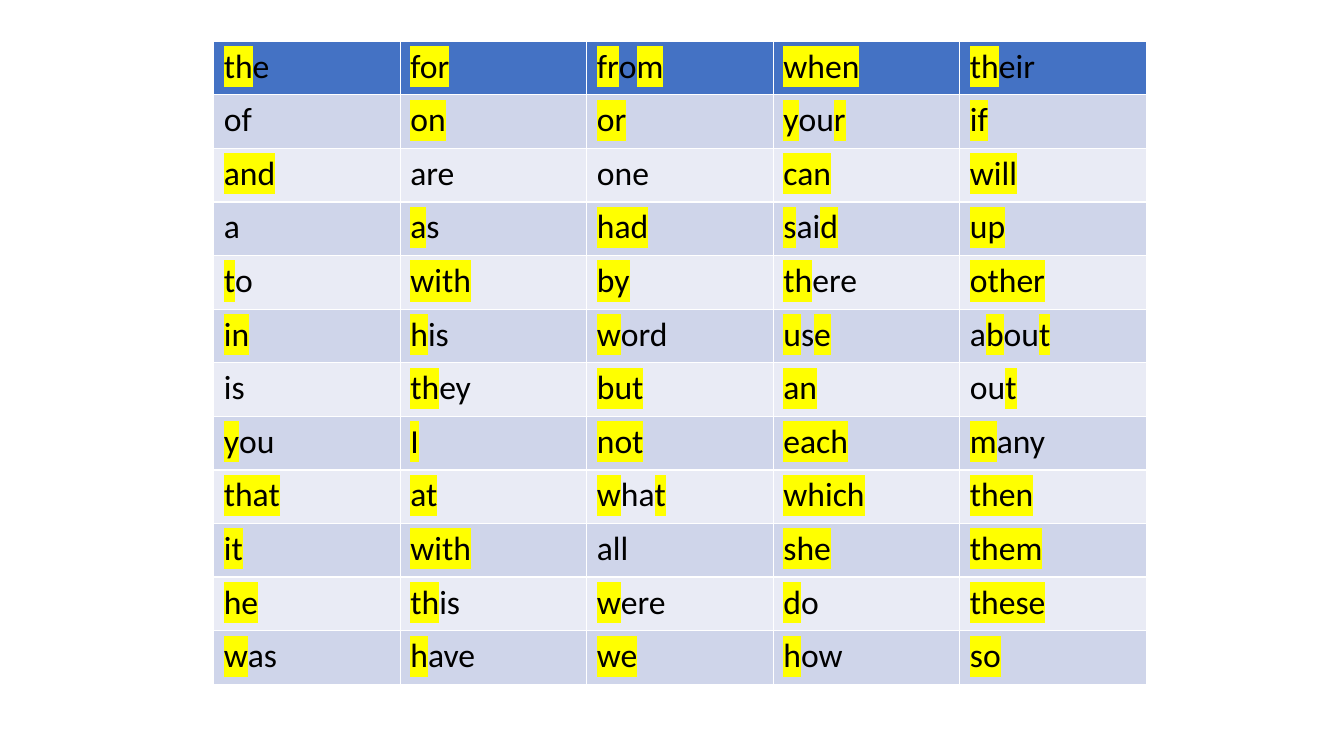
from lxml.etree import SubElement
from pptx import Presentation
from pptx.dml.color import RGBColor
from pptx.oxml.ns import qn
from pptx.util import Inches, Pt

# Letters in square brackets are highlighted.
WORD_ROWS = [
    "[th]e [for] [fr]o[m] [when] [th]eir",
    "of [on] [or] [y]ou[r] [if]",
    "[and] are one [can] [will]",
    "a [a]s [had] [s]ai[d] [up]",
    "[t]o [with] [by] [th]ere [other]",
    "[in] [h]is [w]ord [u]s[e] a[b]ou[t]",
    "is [th]ey [but] [an] ou[t]",
    "[y]ou [I] [not] [each] [m]any",
    "[that] [at] [w]ha[t] [which] [then]",
    "[it] [with] all [she] [them]",
    "[he] [th]is [w]ere [d]o [these]",
    "[w]as [h]ave [we] [h]ow [so]",
]

BLACK = RGBColor(0x00, 0x00, 0x00)
YELLOW = RGBColor(0xFF, 0xFF, 0x00)
HEADER_BLUE = RGBColor(0x44, 0x72, 0xC4)
BAND_COLORS = [RGBColor(0xE9, 0xEB, 0xF5), RGBColor(0xCF, 0xD5, 0xEA)]

LEFT, TOP = Inches(2.12), Inches(0.41)
WIDTH, HEIGHT = Inches(9.25), Inches(6.38)


def add_span(para, text, highlighted):
    span = para.add_run()
    span.text = text
    span.font.size = Pt(24)
    span.font.bold = False
    span.font.color.rgb = BLACK
    if highlighted:
        highlight = SubElement(span.font._element, qn("a:highlight"))
        SubElement(highlight, qn("a:srgbClr"), val=str(YELLOW))
    span.font.name = "Calibri"


def fill_cell(cell, word, color):
    cell.fill.solid()
    cell.fill.fore_color.rgb = color
    para = cell.text_frame.paragraphs[0]
    for position, text in enumerate(word.replace("]", "[").split("[")):
        if text:
            add_span(para, text, highlighted=position % 2 == 1)


def main():
    deck = Presentation()
    deck.slide_width, deck.slide_height = Inches(13.33), Inches(7.5)
    page = deck.slides.add_slide(deck.slide_layouts[6])

    grid = [row.split() for row in WORD_ROWS]
    table = page.shapes.add_table(
        len(grid), len(grid[0]), LEFT, TOP, WIDTH, HEIGHT
    ).table
    for row_index, words in enumerate(grid):
        color = BAND_COLORS[row_index % 2] if row_index else HEADER_BLUE
        for column_index, word in enumerate(words):
            fill_cell(table.cell(row_index, column_index), word, color)

    deck.save("out.pptx")


if __name__ == "__main__":
    main()
